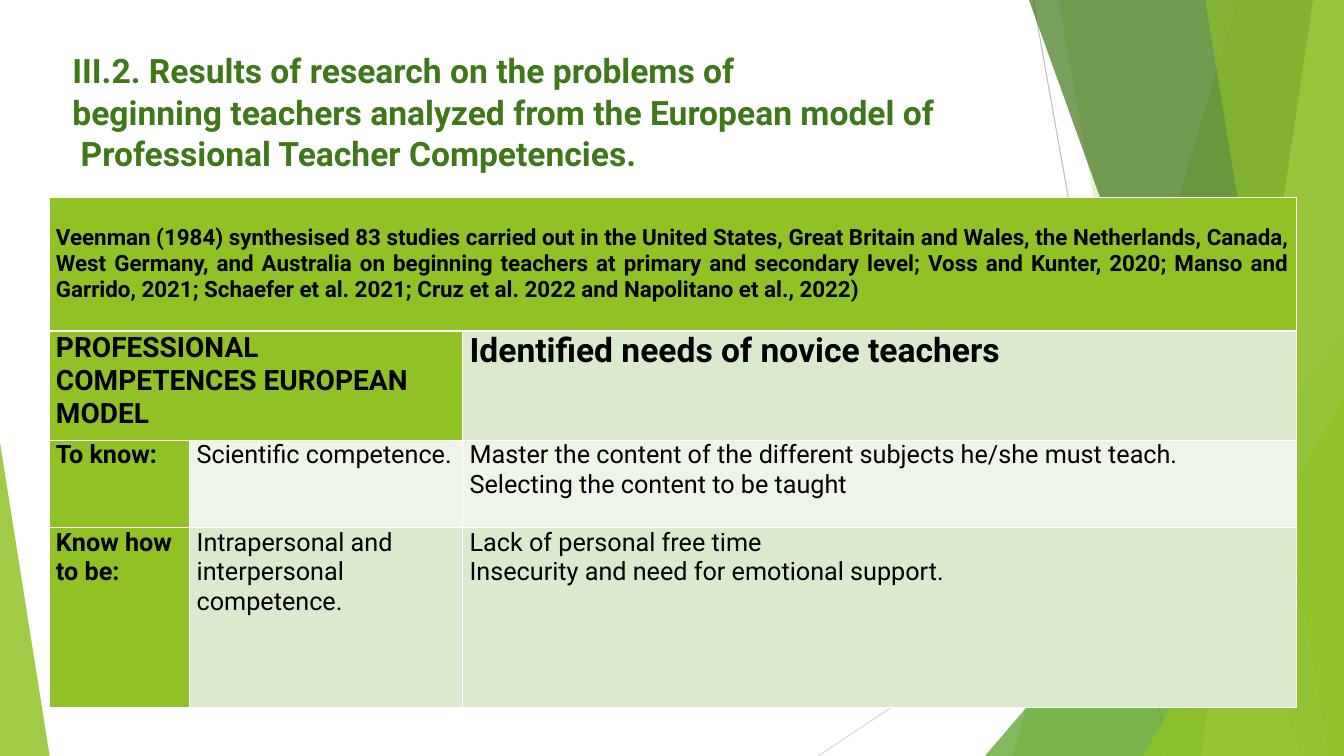
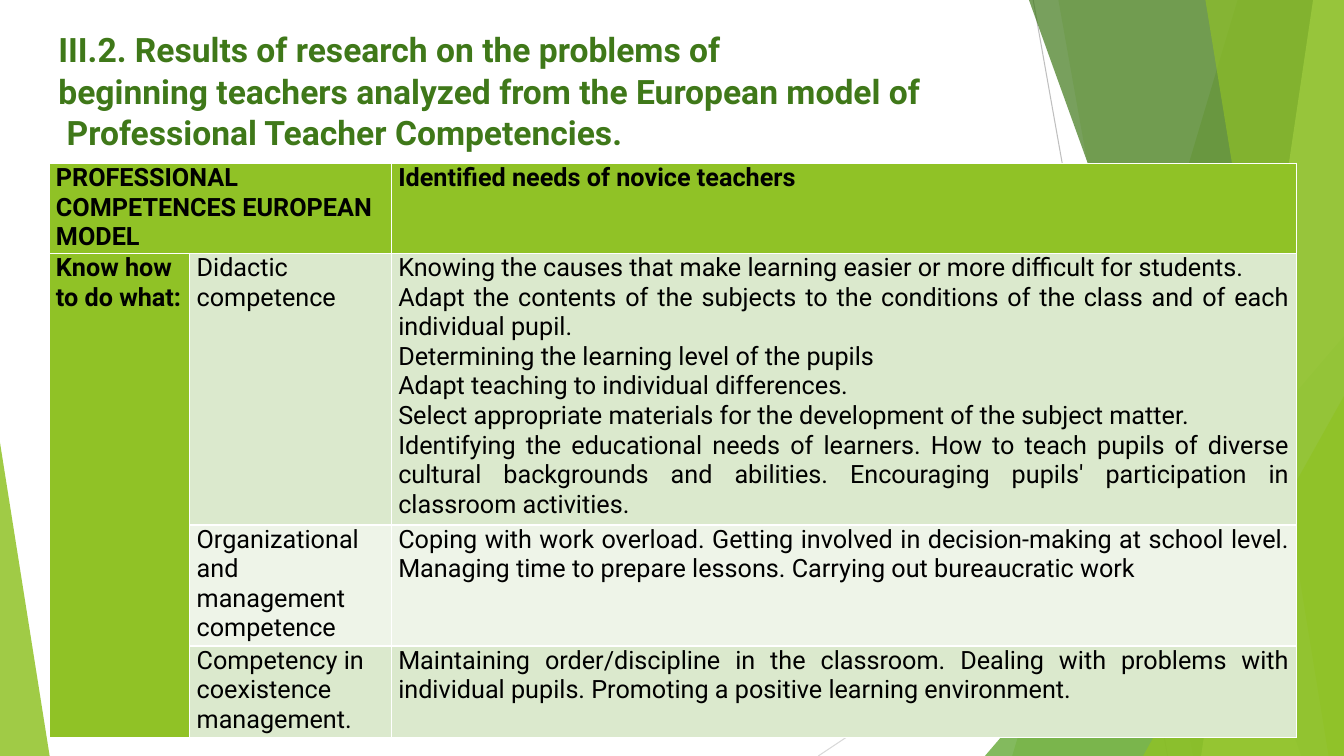
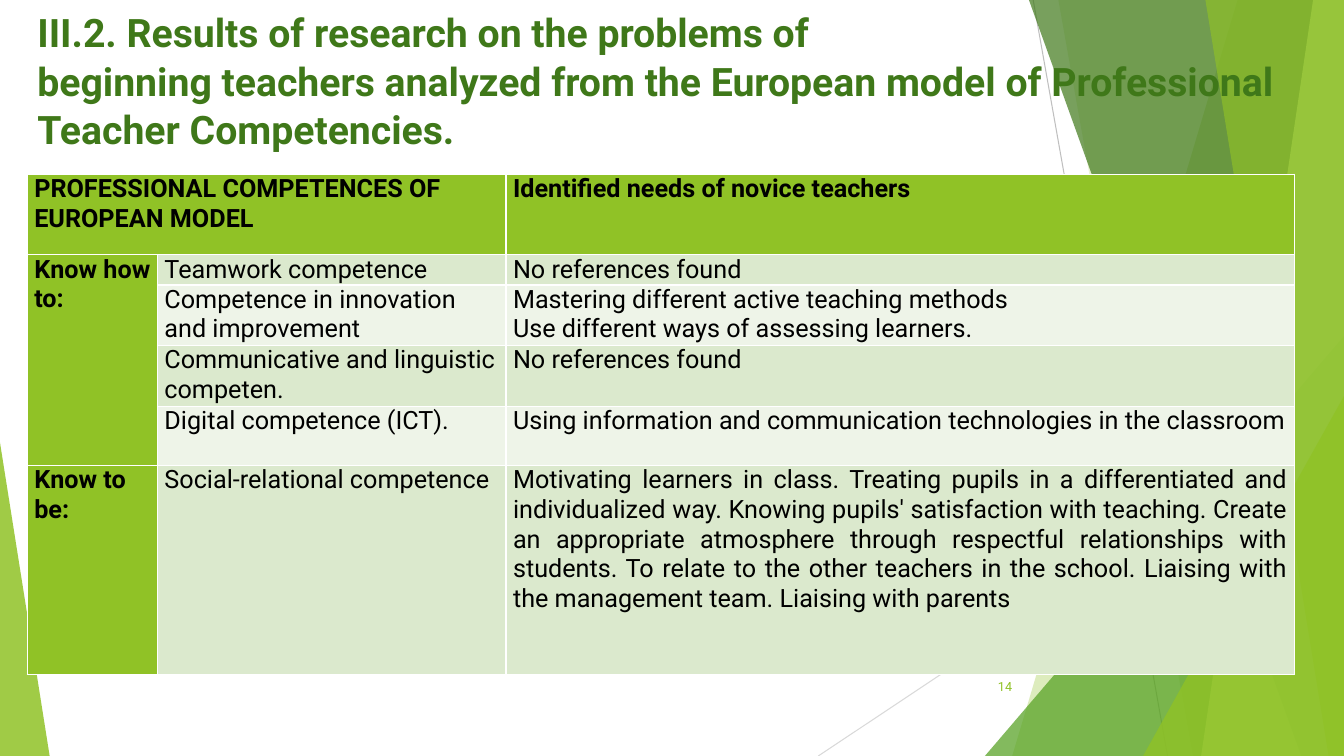
import pptx
import pptx.util
import pptx.dml.color
import pptx.enum.shapes
import pptx.enum.text
import pptx.oxml
import pptx.oxml.ns

Pt = pptx.util.Pt
ALIGN = pptx.enum.text.PP_ALIGN
ANCHOR = pptx.enum.text.MSO_ANCHOR
FONT = "Roboto"
GREEN, DARK, MIDDLE, LIGHT = "90C226", "3F7819", "54A021", "C0E474"
BANDS = ["EEF4E8", "DBE9CD"]
WIDTH, HEIGHT = 960, 540


def color(value):
    return pptx.dml.color.RGBColor.from_string(value)


def format_text(frame, size, value, bold, align):
    for para in frame.paragraphs:
        para.alignment = align
        for span in para.runs:
            span.font.name = FONT
            span.font.size = Pt(size)
            span.font.bold = bold
            span.font.color.rgb = color(value)


deck = pptx.Presentation()
deck.slide_width, deck.slide_height = Pt(WIDTH), Pt(HEIGHT)
layout = deck.slide_layouts[5]
for holder in list(layout.placeholders)[1:]:
    holder.element.getparent().remove(holder.element)

# Page contents: title, its place and size, then the table
TITLE_START = "III.2. Results of research on the problems of\n" \
    "beginning teachers analyzed from the European model of"
TITLE_SPLIT = TITLE_START + "\n Professional Teacher Competencies."
TITLE_WRAPPED = TITLE_START + " Professional Teacher Competencies."
NEEDS = "Identified needs of novice teachers"
MODEL = "PROFESSIONAL COMPETENCES EUROPEAN MODEL"

contents = [
    {
        "title": TITLE_SPLIT, "title_size": 24,
        "title_box": (44.5, 31.5, 915.5, 94.5),
        "table_at": (35, 141), "columns": [100.5, 195, 595.5],
        "heights": [95.5, 78, 62.5, 128.5], "heading_rows": 2,
        "sizes": {(0, 0): 16, (1, 0): 20, (1, 2): 24},
        "merges": [(0, 0, 0, 2), (1, 0, 1, 1)],
        "rows": [
            ["Veenman (1984) synthesised 83 studies carried out in the United States, "
             "Great Britain and Wales, the Netherlands, Canada, West Germany, and Australia "
             "on beginning teachers at primary and secondary level; Voss and Kunter, 2020; "
             "Manso and Garrido, 2021; Schaefer et al. 2021; Cruz et al. 2022 and "
             "Napolitano et al., 2022)", None, None],
            [MODEL, None, NEEDS],
            ["To know:", "Scientific competence.",
             "Master the content of the different subjects he/she must teach.\n"
             "Selecting the content to be taught"],
            ["Know how to be:", "Intrapersonal and interpersonal competence.",
             "Lack of personal free time\nInsecurity and need for emotional support."],
        ],
    },
    {
        "title": TITLE_SPLIT, "title_size": 24,
        "title_box": (34.5, 16.5, 925.5, 94.5),
        "table_at": (35, 116.5), "columns": [100.5, 144, 646.5],
        "heights": [64.5, 194, 86.5, 65.5], "heading_rows": 1, "sizes": {},
        "merges": [(0, 0, 0, 1), (1, 0, 3, 0)],
        "rows": [
            [MODEL, None, NEEDS],
            ["Know how to do what:", "Didactic competence",
             "Knowing the causes that make learning easier or more difficult for students.\n"
             "Adapt the contents of the subjects to the conditions of the class and of each "
             "individual pupil.\n"
             "Determining the learning level of the pupils\n"
             "Adapt teaching to individual differences.\n"
             "Select appropriate materials for the development of the subject matter.\n"
             "Identifying the educational needs of learners. How to teach pupils of diverse "
             "cultural backgrounds and abilities. Encouraging pupils' participation in "
             "classroom activities."],
            [None, "Organizational and management competence",
             "Coping with work overload. Getting involved in decision-making at school level. "
             "Managing time to prepare lessons. Carrying out bureaucratic work"],
            [None, "Competency in coexistence management.",
             "Maintaining order/discipline in the classroom. Dealing with problems with "
             "individual pupils. Promoting a positive learning environment."],
        ],
    },
    {
        "title": TITLE_WRAPPED, "title_size": 28,
        "title_box": (19.5, 1.5, 931, 108.5),
        "table_at": (19.5, 124.5), "columns": [93, 249, 563],
        "heights": [57.5, 21.5, 43, 43, 42.5, 149], "heading_rows": 1, "sizes": {},
        "merges": [(0, 0, 0, 1), (1, 0, 4, 0)], "number": "14",
        "rows": [
            ["PROFESSIONAL COMPETENCES OF EUROPEAN MODEL", None, NEEDS],
            ["Know how to:", "Teamwork competence", "No references found"],
            [None, "Competence in innovation and improvement",
             "Mastering different active teaching methods\n"
             "Use different ways of assessing learners."],
            [None, "Communicative and linguistic competen.", "No references found"],
            [None, "Digital competence (ICT).",
             "Using information and communication technologies in the classroom"],
            ["Know to be:", "Social-relational competence",
             "Motivating learners in class. Treating pupils in a differentiated and "
             "individualized way. Knowing pupils' satisfaction with teaching. Create an "
             "appropriate atmosphere through respectful relationships with students. To "
             "relate to the other teachers in the school. Liaising with the management team. "
             "Liaising with parents"],
        ],
    },
]
pages = [deck.slides.add_slide(layout) for content in contents]

# Green facets: drawn as one group, then moved to the shared layout
facets = pages[0].shapes.add_group_shape()
for x1, y1, x2, y2, value in [(738, 0, 834, HEIGHT, "BFBFBF"),
                              (WIDTH, 290, 584.5, HEIGHT, "D9D9D9")]:
    line = facets.shapes.add_connector(
        pptx.enum.shapes.MSO_CONNECTOR.STRAIGHT, Pt(x1), Pt(y1), Pt(x2), Pt(y2))
    line.line.color.rgb = color(value)
    line.line.width = Pt(0.75)
    line.element.spPr.append(pptx.oxml.parse_xml(
        "<a:effectLst %s/>" % pptx.oxml.ns.nsdecls("a")))

# A band gives its left edge at top and bottom; a triangle its box and apex
for kind, place, value, opacity in [
        ("band", (884, 723), GREEN, 30),
        ("band", (756, 852), GREEN, 20),
        ("triangle", (703.5, 240, 256.5, 300, 1), MIDDLE, 72),
        ("band", (735, 929.5), DARK, 70),
        ("band", (938, 858), LIGHT, 70),
        ("band", (861, 949), GREEN, 65),
        ("triangle", (816.5, 283, 143.5, 257, 1), GREEN, 80),
        ("triangle", (0, 316, 35.5, 224, 0), GREEN, 85)]:
    if kind == "band":
        top, bottom = place
        outline = facets.shapes.build_freeform(Pt(top), 0)
        outline.add_line_segments([(Pt(WIDTH), 0), (Pt(WIDTH), Pt(HEIGHT)),
                                   (Pt(bottom), Pt(HEIGHT))])
        facet = outline.convert_to_shape()
    else:
        facet = facets.shapes.add_shape(
            pptx.enum.shapes.MSO_SHAPE.ISOSCELES_TRIANGLE, *map(Pt, place[:4]))
        facet.adjustments[0] = place[4]
    facet.shadow.inherit = False
    facet.line.fill.background()
    facet.fill.solid()
    facet.fill.fore_color.rgb = color(value)
    tint = facet.element.spPr.find(".//" + pptx.oxml.ns.qn("a:srgbClr"))
    tint.append(pptx.oxml.parse_xml('<a:alpha %s val="%d"/>' % (
        pptx.oxml.ns.nsdecls("a"), opacity * 1000)))
layout.shapes.element.insert(2, facets.element)

for page, content in zip(pages, contents):
    # Title
    title = page.shapes.title
    title.left, title.top, title.width, title.height = map(Pt, content["title_box"])
    frame = title.text_frame
    frame.text = content["title"]
    frame.word_wrap = True
    frame.auto_size = pptx.enum.text.MSO_AUTO_SIZE.NONE
    frame.vertical_anchor = ANCHOR.TOP
    format_text(frame, content["title_size"], DARK, True, ALIGN.LEFT)
    for para in frame.paragraphs:
        para.line_spacing = 1.03

    # Page number
    if "number" in content:
        box = page.shapes.add_textbox(Pt(676), Pt(476), Pt(54), Pt(29))
        box.text_frame.text = content["number"]
        box.text_frame.word_wrap = True
        box.text_frame.vertical_anchor = ANCHOR.MIDDLE
        format_text(box.text_frame, 9, GREEN, False, ALIGN.RIGHT)

    # Table: the default style supplies the white rules
    columns, heights = content["columns"], content["heights"]
    table = page.shapes.add_table(
        len(heights), len(columns), *map(Pt, content["table_at"]),
        Pt(sum(columns)), Pt(sum(heights))).table
    for column, width in zip(table.columns, columns):
        column.width = Pt(width)
    for row, height in zip(table.rows, heights):
        row.height = Pt(height)
    for top, left, bottom, right in content["merges"]:
        table.cell(top, left).merge(table.cell(bottom, right))

    for r, texts in enumerate(content["rows"]):
        for c, text in enumerate(texts):
            cell = table.cell(r, c)
            cell.fill.solid()
            cell.fill.fore_color.rgb = color(GREEN if r == 0 or c == 0 else BANDS[r % 2])
            cell.margin_left = cell.margin_right = Pt(5)
            cell.margin_top = cell.margin_bottom = 0
            if text is None:
                continue
            full_width = cell.span_width == len(columns)
            cell.vertical_anchor = ANCHOR.MIDDLE if full_width else ANCHOR.TOP
            cell.text_frame.text = text
            format_text(cell.text_frame, content["sizes"].get((r, c), 18), "000000",
                        c == 0 or r < content["heading_rows"],
                        ALIGN.JUSTIFY if full_width or c == 2 else ALIGN.LEFT)

deck.save("out.pptx")
